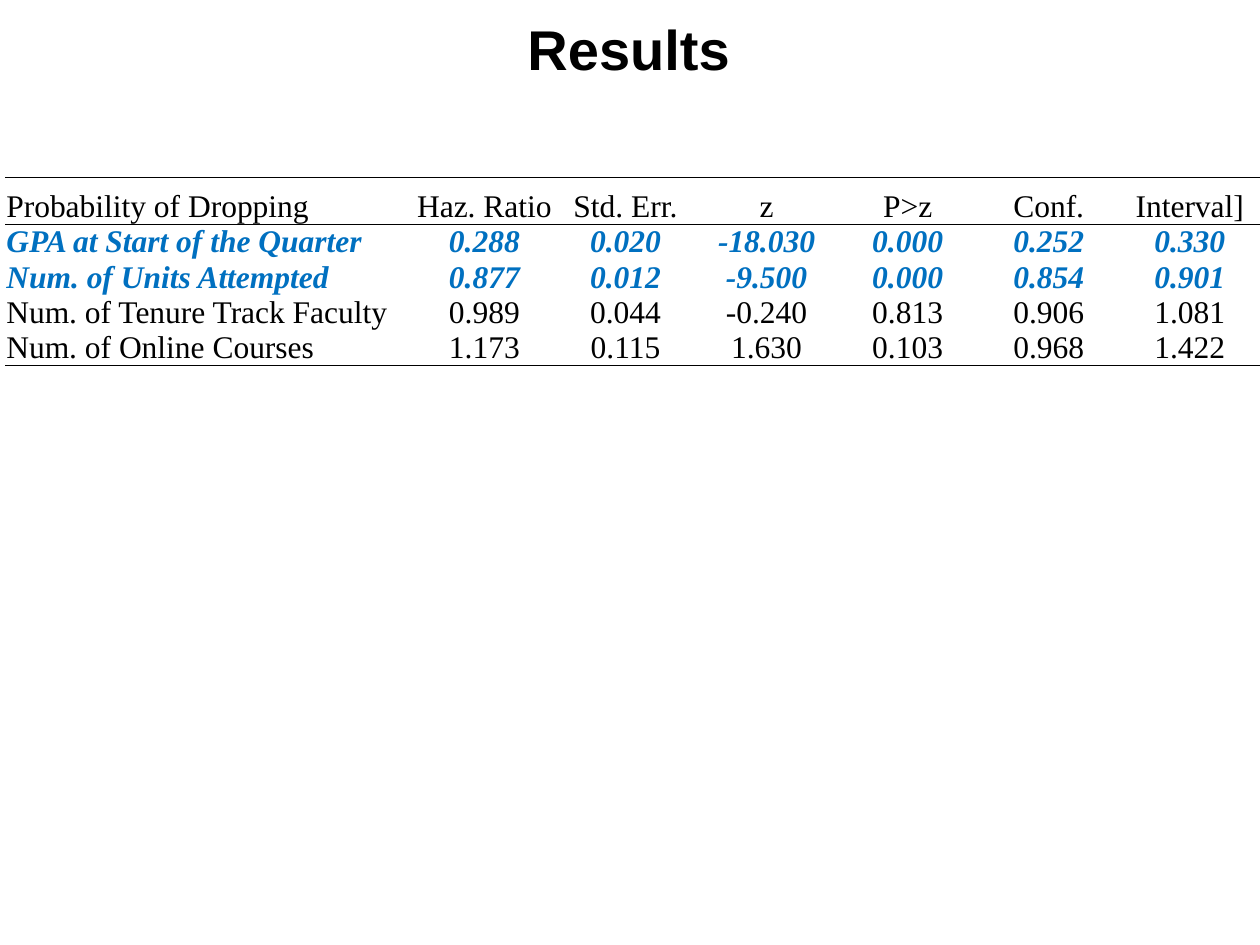
"""Build the Results slide with its table of hazard ratios."""
from lxml.etree import SubElement
from pptx import Presentation
from pptx.dml.color import RGBColor
from pptx.enum.text import MSO_ANCHOR, PP_ALIGN
from pptx.oxml.ns import qn
from pptx.util import Inches, Pt


def style(font, name, size, color, bold=False, italic=False):
    font.name, font.size = name, Pt(size)
    font.bold, font.italic = bold, italic
    font.color.rgb = RGBColor.from_string(color)


def border(cell, sides):
    props = cell._tc.get_or_add_tcPr()
    for side in "LRTB":
        line = SubElement(props, qn("a:ln" + side), w=str(Pt(0.5)))
        if side in sides:
            fill = SubElement(line, qn("a:solidFill"))
            SubElement(fill, qn("a:srgbClr"), val="000000")
        else:
            SubElement(line, qn("a:noFill"))


deck = Presentation()
deck.slide_width, deck.slide_height = Inches(10), Inches(7.5)
slide = deck.slides.add_slide(deck.slide_layouts[5])

title = slide.shapes.title
title.left, title.top = Inches(0.03), Inches(0.03)
title.width, title.height = Inches(9.92), Inches(0.7)
title.text_frame.text = "Results"
title.text_frame.vertical_anchor = MSO_ANCHOR.MIDDLE
head = title.text_frame.paragraphs[0]
head.alignment = PP_ALIGN.CENTER
style(head.runs[0].font, "Arial", 32, "000000", bold=True)

rows = [
    ["Probability of Dropping", "Haz. Ratio", "Std. Err.", "z", "P>z", "Conf.", "Interval]"],
    ["GPA at Start of the Quarter", "0.288", "0.020", "-18.030", "0.000", "0.252", "0.330"],
    ["Num. of Units Attempted", "0.877", "0.012", "-9.500", "0.000", "0.854", "0.901"],
    ["Num. of Tenure Track Faculty", "0.989", "0.044", "-0.240", "0.813", "0.906", "1.081"],
    ["Num. of Online Courses", "1.173", "0.115", "1.630", "0.103", "0.968", "1.422"],
]
rules = ["TB", "T", "", "", "B"]
strong = {1, 2}

table = slide.shapes.add_table(
    len(rows), len(rows[0]), Inches(0.04), Inches(1.41), Inches(9.96), Inches(1.49)
).table
table.first_row = table.horz_banding = False
for c, col in enumerate(table.columns):
    col.width = Inches(1.12 if c else 3.24)

for r, row in enumerate(rows):
    table.rows[r].height = Inches(0.28 if r else 0.37)
    for c, text in enumerate(row):
        cell = table.cell(r, c)
        border(cell, rules[r])
        cell.fill.background()
        cell.margin_left = Inches(0.01)
        cell.margin_right = cell.margin_top = cell.margin_bottom = 0
        cell.vertical_anchor = MSO_ANCHOR.BOTTOM
        cell.text_frame.text = text
        para = cell.text_frame.paragraphs[0]
        para.alignment = PP_ALIGN.CENTER if c else PP_ALIGN.LEFT
        bold = r in strong
        color = "0070C0" if bold else "000000"
        style(para.runs[0].font, "Times New Roman", 18, color, bold, bold)

deck.save("out.pptx")
